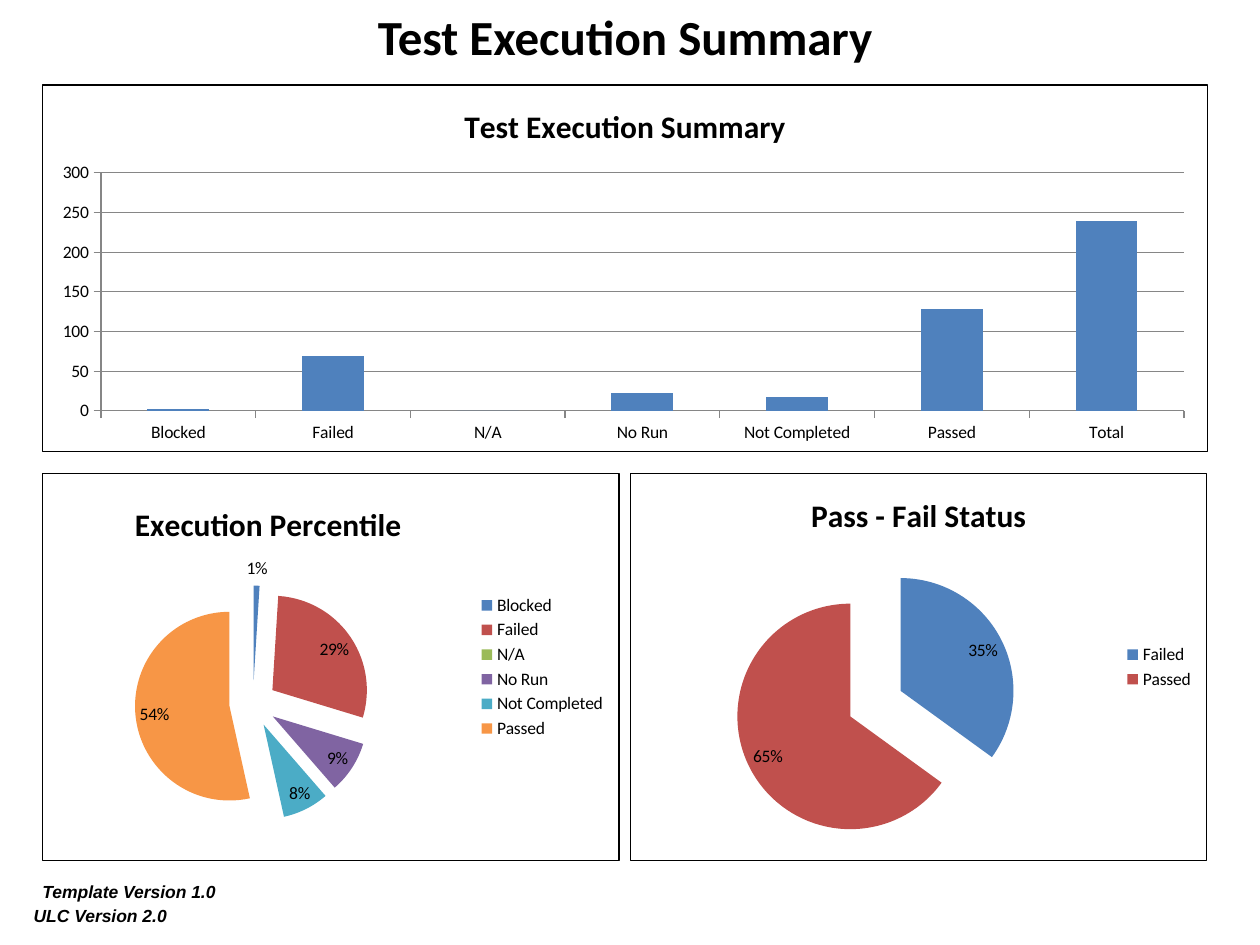
from lxml.etree import SubElement
from pptx import Presentation
from pptx.chart.data import CategoryChartData
from pptx.dml.color import RGBColor
from pptx.enum.chart import XL_CHART_TYPE, XL_LABEL_POSITION, XL_LEGEND_POSITION, XL_TICK_MARK
from pptx.enum.text import PP_ALIGN
from pptx.oxml import parse_xml
from pptx.oxml.ns import nsdecls, qn
from pptx.util import Cm, Pt

COLORS = {
    "text": "000000", "border": "000000", "axis": "868686", "blue": "4F81BD",
    "red": "C0504D", "green": "9BBB59", "purple": "8064A2", "teal": "4BACC6",
    "orange": "F79646",
}
SLICES = ["blue", "red", "green", "purple", "teal", "orange"]
LEFT, RIGHT_PIE = Cm(0.85), Cm(12.7)
FULL_WIDTH, PIE_WIDTH = Cm(23.5), Cm(11.64)
PIE_TOP, PIE_HEIGHT = Cm(9.53), Cm(7.83)


def color(name):
    return RGBColor.from_string(COLORS[name])


def style_font(font, size, family="Calibri", bold=False, italic=False):
    font.name, font.size, font.bold, font.italic = family, Pt(size), bold, italic
    font.color.rgb = color("text")


def add_text_box(slide, left, top, width, height):
    frame = slide.shapes.add_textbox(left, top, width, height).text_frame
    frame.word_wrap = True
    return frame


def add_heading(slide):
    heading = add_text_box(slide, LEFT, 0, FULL_WIDTH, Cm(1.27)).paragraphs[0]
    heading.text = "Test Execution Summary"
    heading.alignment = PP_ALIGN.CENTER
    style_font(heading.runs[0].font, 28, bold=True)


def add_versions(slide):
    frame = add_text_box(slide, Cm(0.43), Cm(17.35), Cm(17.15), Cm(1.45))
    template, ulc = frame.paragraphs[0], frame.add_paragraph()
    for paragraph, text, size in (
        (template, " ", 18),
        (template, "Template Version 1.0", 10),
        (ulc, "ULC Version 2.0", 10),
    ):
        run = paragraph.add_run()
        run.text = text
        style_font(run.font, size, "Arial", bold=True, italic=True)


def place(element, **fractions):
    """Give a title or plot area a manual layout, in fractions of the chart."""
    layout = element.find(qn("c:layout"))
    if layout is None:
        layout = parse_xml(f"<c:layout {nsdecls('c')}/>")
        text = element.find(qn("c:tx"))
        if text is None:
            element.insert(0, layout)
        else:
            text.addnext(layout)
    manual = SubElement(layout, qn("c:manualLayout"))
    if "w" in fractions:
        SubElement(manual, qn("c:layoutTarget")).set("val", "inner")
    for mode in ("xMode", "yMode"):
        SubElement(manual, qn(f"c:{mode}")).set("val", "edge")
    for key, value in fractions.items():
        SubElement(manual, qn(f"c:{key}")).set("val", str(value))


def add_chart(slide, kind, box, title, values, plot_area):
    """Add a bordered one-series chart with a bold title."""
    data = CategoryChartData()
    data.categories = list(values)
    data.add_series("Series 1", list(values.values()))
    chart = slide.shapes.add_chart(kind, *box, data).chart
    style_font(chart.font, 10)
    chart.has_title = True
    chart.chart_title.include_in_layout = False
    heading = chart.chart_title.text_frame
    heading.text = title
    style_font(heading.paragraphs[0].runs[0].font, 18, bold=True)
    root = chart.element
    root.find(qn("c:chart")).addnext(parse_xml(
        f'<c:spPr {nsdecls("c", "a")}><a:noFill/><a:ln w="{Pt(0.75)}"><a:solidFill>'
        f'<a:srgbClr val="{COLORS["border"]}"/></a:solidFill></a:ln></c:spPr>'
    ))
    x, y, w, h = plot_area
    place(next(root.iter(qn("c:plotArea"))), x=x, y=y, w=w, h=h)
    return chart


def add_column_chart(slide, box, title, values, plot_area):
    chart = add_chart(slide, XL_CHART_TYPE.COLUMN_CLUSTERED, box, title, values, plot_area)
    chart.has_legend = False
    plot = chart.plots[0]
    plot.gap_width = 150
    plot.vary_by_categories = False
    fill = plot.series[0].format.fill
    fill.solid()
    fill.fore_color.rgb = color("blue")
    chart.value_axis.maximum_scale = 300
    chart.value_axis.minimum_scale = 0
    chart.value_axis.major_unit = 50
    chart.value_axis.has_major_gridlines = True
    for axis in (chart.category_axis, chart.value_axis):
        axis.major_tick_mark = XL_TICK_MARK.OUTSIDE
        axis.format.line.color.rgb = color("axis")
    chart.value_axis.major_gridlines.format.line.color.rgb = color("axis")


def add_pie_chart(slide, box, title, values, plot_area):
    chart = add_chart(slide, XL_CHART_TYPE.PIE_EXPLODED, box, title, values, plot_area)
    chart.has_legend = True
    chart.legend.position = XL_LEGEND_POSITION.RIGHT
    chart.legend.include_in_layout = False
    style_font(chart.legend.font, 10)
    plot = chart.plots[0]
    plot.vary_by_categories = True
    series = plot.series[0]
    for index, name in enumerate(SLICES[:len(values)]):
        fill = series.points[index].format.fill
        fill.solid()
        fill.fore_color.rgb = color(name)
    for explosion in chart.element.iter(qn("c:explosion")):
        explosion.set("val", "25")
    labels = series.data_labels
    labels.show_value = True
    labels.number_format = '0"%";;'  # whole percentages, zero hidden
    labels.number_format_is_linked = False
    labels.position = XL_LABEL_POSITION.BEST_FIT
    style_font(labels.font, 10)
    return chart


def main():
    deck = Presentation()
    deck.slide_width, deck.slide_height = Cm(25.4), Cm(19.05)
    slide = deck.slides.add_slide(deck.slide_layouts[6])
    add_heading(slide)
    add_column_chart(
        slide, (LEFT, Cm(1.7), FULL_WIDTH, Cm(7.41)), "Test Execution Summary",
        {"Blocked": 2, "Failed": 69, "N/A": 0, "No Run": 22,
         "Not Completed": 18, "Passed": 128, "Total": 239},
        (0.05, 0.24, 0.93, 0.65),
    )
    percentile = add_pie_chart(
        slide, (LEFT, PIE_TOP, PIE_WIDTH, PIE_HEIGHT), "Execution Percentile",
        {"Blocked": 1, "Failed": 29, "N/A": 0, "No Run": 9,
         "Not Completed": 8, "Passed": 54},
        (0.16, 0.29, 0.41, 0.61),
    )
    place(next(percentile.element.iter(qn("c:title"))), x=0.15, y=0.06)
    add_pie_chart(
        slide, (RIGHT_PIE, PIE_TOP, PIE_WIDTH, PIE_HEIGHT), "Pass - Fail Status",
        {"Failed": 35, "Passed": 65}, (0.18, 0.23, 0.49, 0.73),
    )
    add_versions(slide)
    deck.save("out.pptx")


if __name__ == "__main__":
    main()
